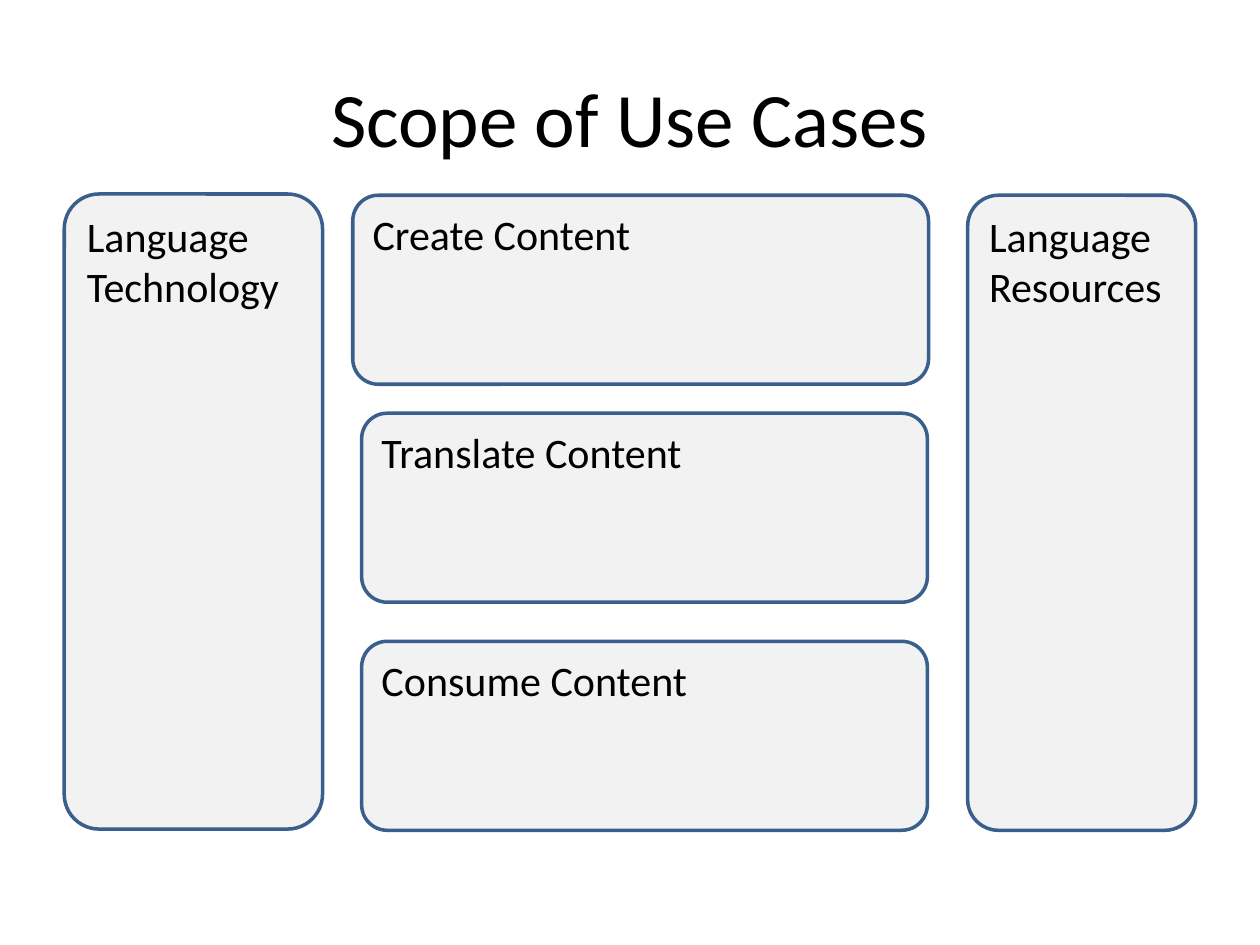
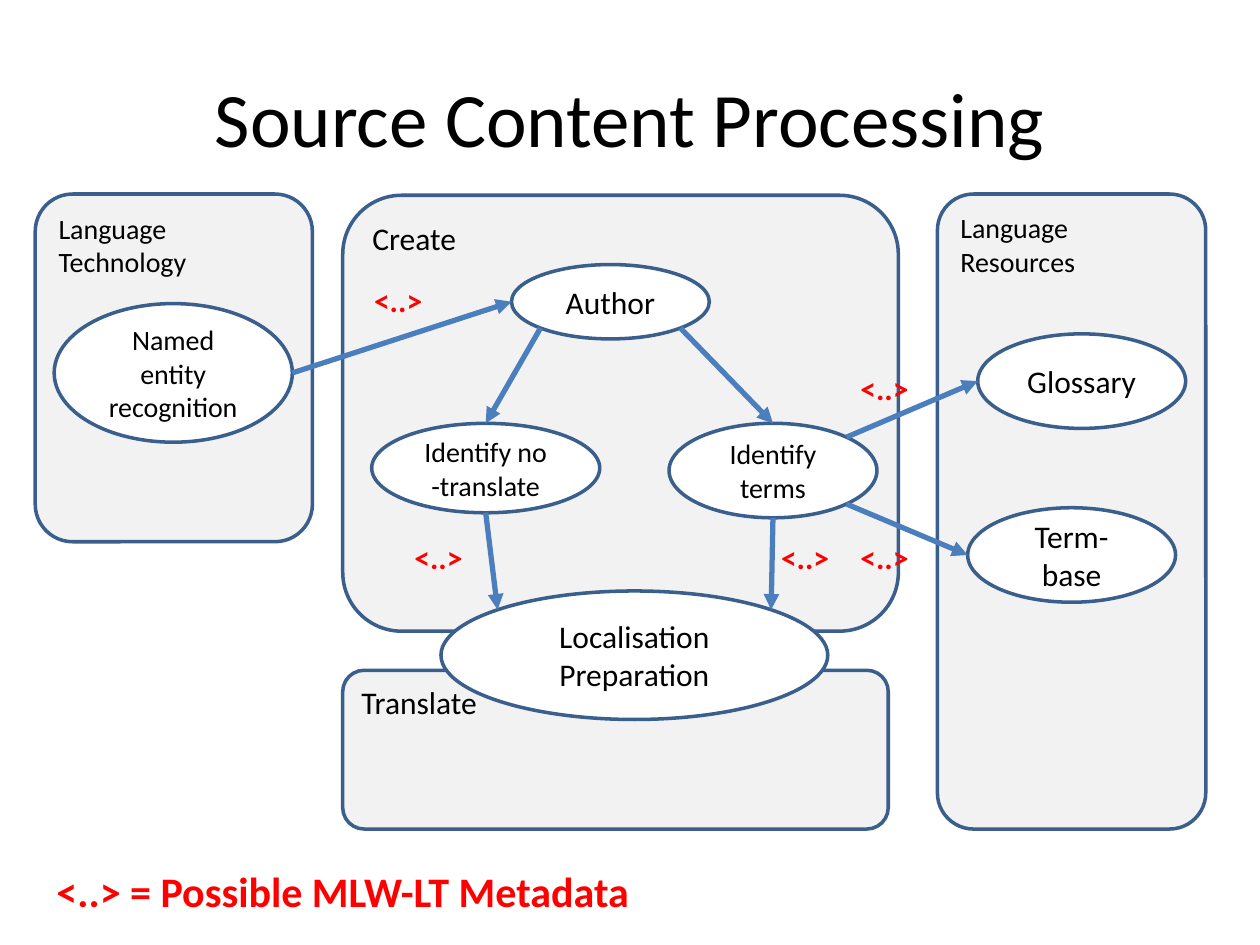
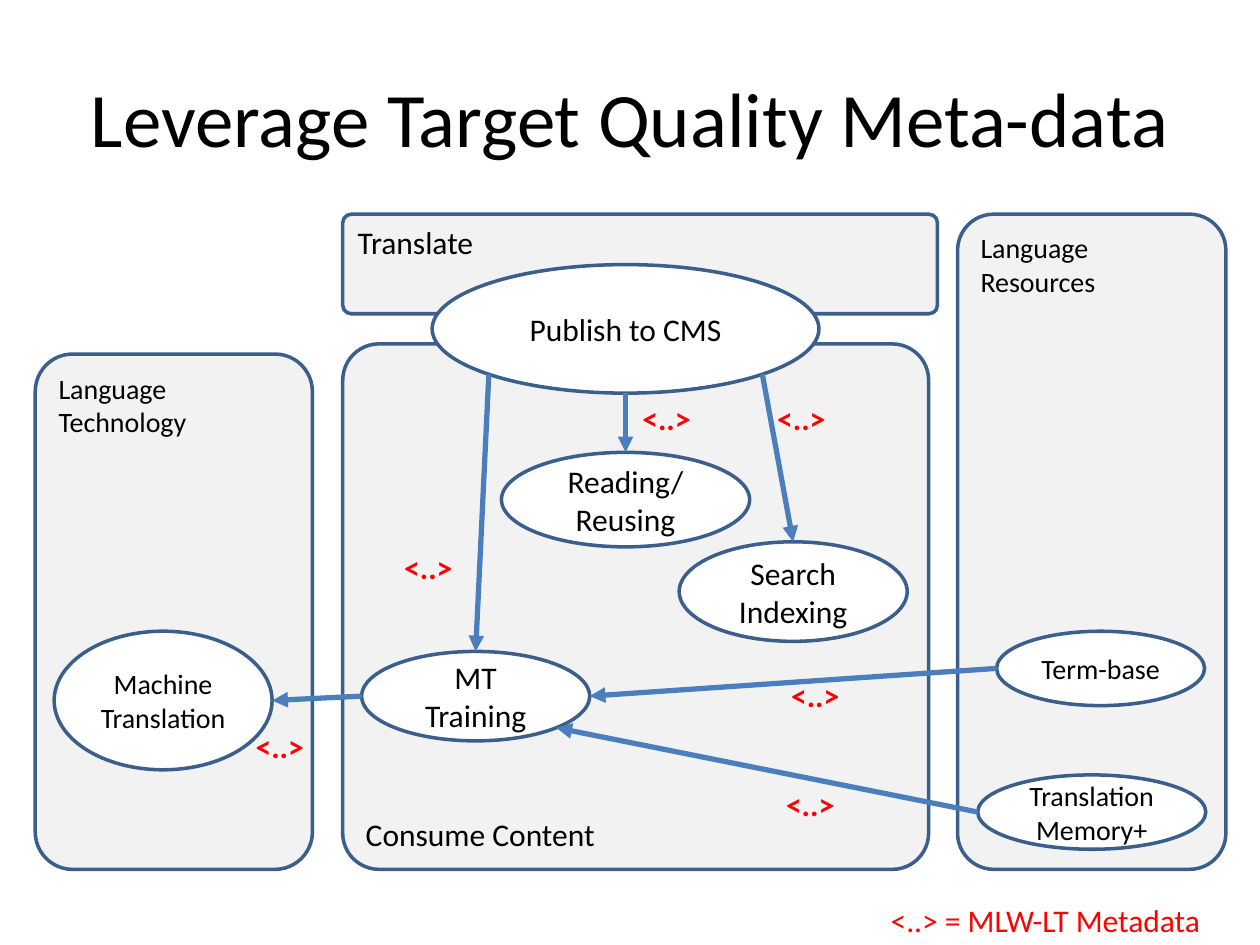
import math

import lxml.etree
import pptx
import pptx.dml.color
import pptx.enum.shapes
import pptx.enum.text
import pptx.oxml.ns
import pptx.util

Inches = pptx.util.Inches
Pt = pptx.util.Pt
ANCHOR = pptx.enum.text.MSO_ANCHOR
ALIGN = pptx.enum.text.PP_ALIGN
SHAPE = pptx.enum.shapes.MSO_SHAPE

FONT = "Calibri"
COLORS = {
    "text": "000000",
    "panel": "F2F2F2",
    "oval": "FFFFFF",
    "outline": "3A5F8C",
    "arrow": "4B7EBC",
    "metadata": "FF0000",
}
DIAGONAL = math.sqrt(0.5)
SITES = {
    "top": (0, -1),
    "left": (-1, 0),
    "bottom": (0, 1),
    "right": (1, 0),
    "top left": (-DIAGONAL, -DIAGONAL),
    "top right": (DIAGONAL, -DIAGONAL),
    "bottom left": (-DIAGONAL, DIAGONAL),
    "bottom right": (DIAGONAL, DIAGONAL),
}


def color(name):
    """Return the named colour as an RGB value."""
    return pptx.dml.color.RGBColor.from_string(COLORS[name])


def write_text(shape, text, size=18, color_name="text", bold=False,
               align=ALIGN.LEFT, anchor=ANCHOR.TOP, wrap=True):
    """Write text into a shape, one paragraph for each line."""
    frame = shape.text_frame
    frame.text = text
    frame.word_wrap = wrap
    frame.vertical_anchor = anchor
    for paragraph in frame.paragraphs:
        paragraph.alignment = align
        paragraph.font.name = FONT
        paragraph.font.size = Pt(size)
        paragraph.font.bold = bold
        paragraph.font.color.rgb = color(color_name)


def add_title(slide, text):
    """Add the slide title."""
    box = slide.shapes.add_textbox(Inches(0.5), Inches(0.3), Inches(9), Inches(1.25))
    write_text(box, text, size=44, align=ALIGN.CENTER, anchor=ANCHOR.MIDDLE)


def add_outlined(slide, kind, bounds, fill):
    """Add a filled preset shape with the shared outline."""
    shape = slide.shapes.add_shape(kind, *map(Inches, bounds))
    shape.shadow.inherit = False
    shape.fill.solid()
    shape.fill.fore_color.rgb = color(fill)
    shape.line.color.rgb = color("outline")
    shape.line.width = Pt(2)
    return shape


def add_panel(slide, text, bounds, rounding=0.135, **text_format):
    """Add a rounded panel with its heading."""
    panel = add_outlined(slide, SHAPE.ROUNDED_RECTANGLE, bounds, "panel")
    panel.adjustments[0] = rounding
    write_text(panel, text, **text_format)


def add_oval(slide, text, bounds, size=18):
    """Add a process step as an oval and return it."""
    oval = add_outlined(slide, SHAPE.OVAL, bounds, "oval")
    write_text(oval, text, size=size, align=ALIGN.CENTER, anchor=ANCHOR.MIDDLE)
    return oval


def site_point(oval, site):
    """Return the point of a named site on an oval's edge."""
    across, down = SITES[site]
    return (round(oval.left + oval.width * (1 + across) / 2),
            round(oval.top + oval.height * (1 + down) / 2))


def add_arrow(slide, start, start_site, end, end_site):
    """Add an arrow between sites of two ovals."""
    arrow = slide.shapes.add_connector(
        pptx.enum.shapes.MSO_CONNECTOR.STRAIGHT,
        *site_point(start, start_site), *site_point(end, end_site))
    arrow.line.color.rgb = color("arrow")
    arrow.line.width = Pt(3)
    qn = pptx.oxml.ns.qn
    lxml.etree.SubElement(arrow.line._get_or_add_ln(), qn("a:tailEnd"), type="triangle")
    lxml.etree.SubElement(arrow._element.spPr, qn("a:effectLst"))


def add_metadata(slide, left, top, text="<..>", width=0.59, height=0.4, size=18, bold=True):
    """Add a red metadata mark or its legend."""
    box = slide.shapes.add_textbox(*map(Inches, (left, top, width, height)))
    write_text(box, text, size=size, color_name="metadata", bold=bold, wrap=False)
    box.text_frame.auto_size = pptx.enum.text.MSO_AUTO_SIZE.SHAPE_TO_FIT_TEXT


def build_scope(slide):
    """Build the overview of use cases."""
    add_title(slide, "Scope of Use Cases")
    for text, bounds in (
        ("Create Content", (2.8, 1.55, 4.57, 1.5)),
        ("Translate Content", (2.87, 3.28, 4.49, 1.5)),
        ("Consume Content", (2.87, 5.09, 4.49, 1.5)),
        ("Language Technology", (0.51, 1.54, 2.05, 5.04)),
        ("Language Resources", (7.68, 1.55, 1.81, 5.04)),
    ):
        add_panel(slide, text, bounds, size=24)


def build_source_processing(slide):
    """Build the diagram of source content processing."""
    add_title(slide, "Source Content Processing")
    add_panel(slide, "Create", (2.72, 1.55, 4.41, 3.46))
    add_panel(slide, "Translate", (2.72, 5.32, 4.33, 1.26))
    add_panel(slide, "Language Technology", (0.28, 1.54, 2.2, 2.76), size=16)
    add_panel(slide, "Language Resources", (7.44, 1.54, 2.13, 5.04), size=16)

    author = add_oval(slide, "Author", (4.06, 2.1, 1.57, 0.59))
    no_translate = add_oval(slide, "Identify no -translate", (2.95, 3.36, 1.81, 0.71), size=16)
    terms = add_oval(slide, "Identify terms", (5.31, 3.36, 1.65, 0.75), size=16)
    recognition = add_oval(slide, "Named entity recognition", (0.43, 2.41, 1.89, 1.1), size=16)
    term_base = add_oval(slide, "Term-base", (7.68, 4.03, 1.65, 0.75))
    preparation = add_oval(slide, "Localisation Preparation", (3.5, 4.69, 3.07, 1.02))
    glossary = add_oval(slide, "Glossary", (7.76, 2.65, 1.65, 0.75))

    for ends in (
        (recognition, "right", author, "left"),
        (author, "bottom right", terms, "top"),
        (author, "bottom left", no_translate, "top"),
        (terms, "bottom right", term_base, "left"),
        (no_translate, "bottom", preparation, "top left"),
        (terms, "bottom", preparation, "top right"),
        (terms, "top right", glossary, "left"),
    ):
        add_arrow(slide, *ends)
    for place in ((2.87, 2.18), (3.19, 4.22), (6.1, 4.22), (6.73, 2.88), (6.73, 4.22)):
        add_metadata(slide, *place)
    add_metadata(slide, 0.35, 6.82, "<..> = Possible MLW-LT Metadata",
                 width=4.8, height=0.5, size=24)


def build_target_quality(slide):
    """Build the diagram of target quality metadata."""
    add_panel(slide, "Consume Content", (2.72, 2.73, 4.65, 4.17),
              rounding=0.069, anchor=ANCHOR.BOTTOM)
    add_title(slide, "Leverage Target Quality Meta-data")
    add_panel(slide, "Translate", (2.72, 1.7, 4.72, 0.79), rounding=0.086)
    add_panel(slide, "Language Technology", (0.28, 2.81, 2.2, 4.09), size=16)
    add_panel(slide, "Language Resources", (7.6, 1.7, 2.13, 5.2), size=16)

    training = add_oval(slide, "MT Training", (2.87, 5.17, 1.81, 0.71))
    reading = add_oval(slide, "Reading/\nReusing", (3.98, 3.59, 1.97, 0.75))
    translation = add_oval(slide, "Machine Translation", (0.43, 5.01, 1.73, 1.1), size=16)
    indexing = add_oval(slide, "Search Indexing", (5.39, 4.3, 1.81, 0.79))
    term_base = add_oval(slide, "Term-base", (7.91, 5.01, 1.65, 0.59), size=16)
    memory = add_oval(slide, "Translation Memory+", (7.76, 6.15, 1.81, 0.59), size=16)
    publish = add_oval(slide, "Publish to CMS", (3.43, 2.1, 3.07, 1.02))

    for ends in (
        (publish, "bottom right", indexing, "top"),
        (term_base, "left", training, "right"),
        (publish, "bottom", reading, "top"),
        (publish, "bottom left", training, "top"),
        (training, "left", translation, "right"),
        (memory, "left", training, "bottom right"),
    ):
        add_arrow(slide, *ends)
    for place in ((3.11, 4.3), (5, 3.12), (6.07, 3.12), (6.18, 5.32), (1.93, 5.72), (6.14, 6.18)):
        add_metadata(slide, *place)
    add_metadata(slide, 6.97, 7.1, "<..> = MLW-LT Metadata", width=2.7, bold=False)


def main():
    """Build and save the presentation."""
    presentation = pptx.Presentation()
    presentation.slide_width = Inches(10)
    presentation.slide_height = Inches(7.5)
    for build in (build_scope, build_source_processing, build_target_quality):
        build(presentation.slides.add_slide(presentation.slide_layouts[6]))
    presentation.save("out.pptx")


if __name__ == "__main__":
    main()
